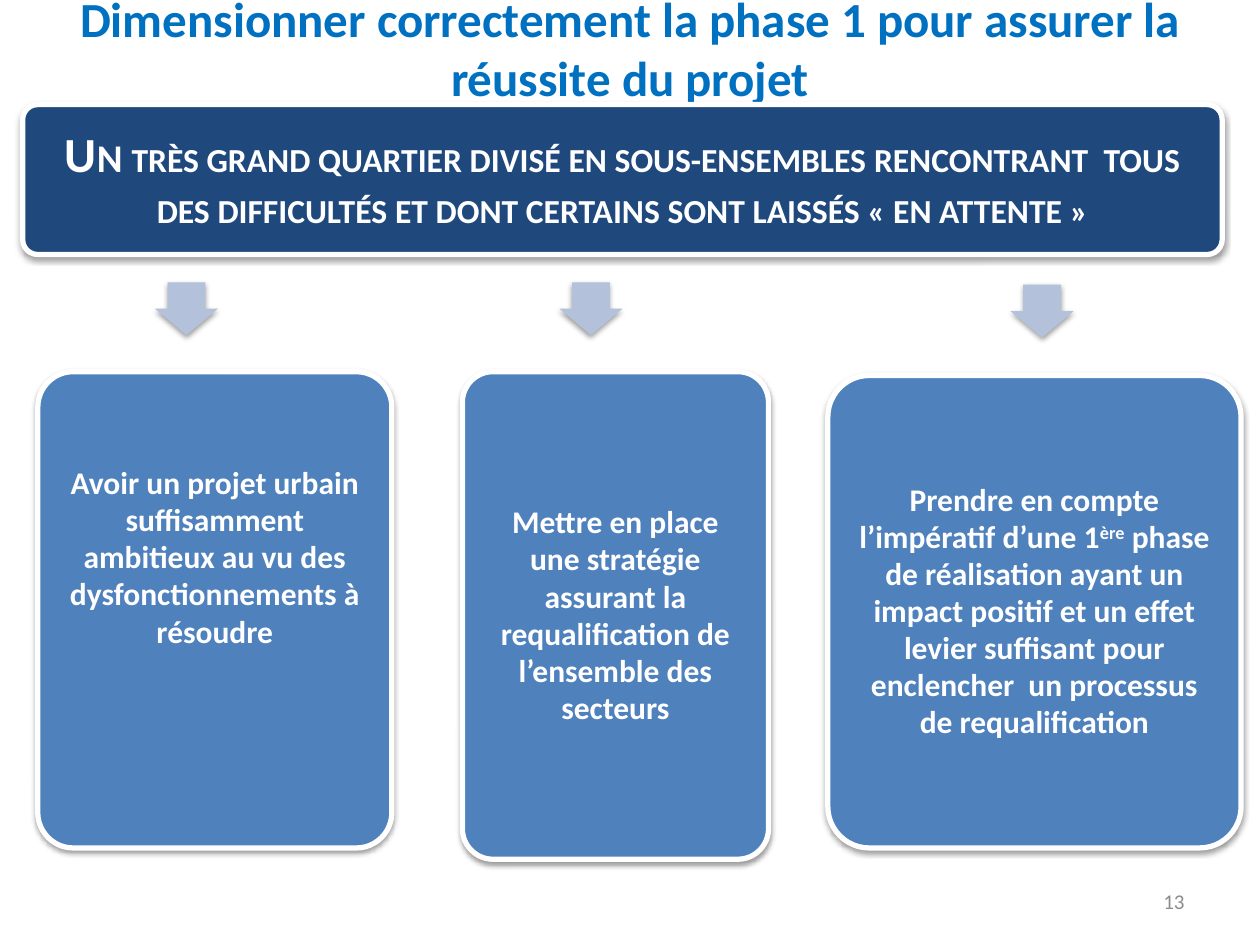
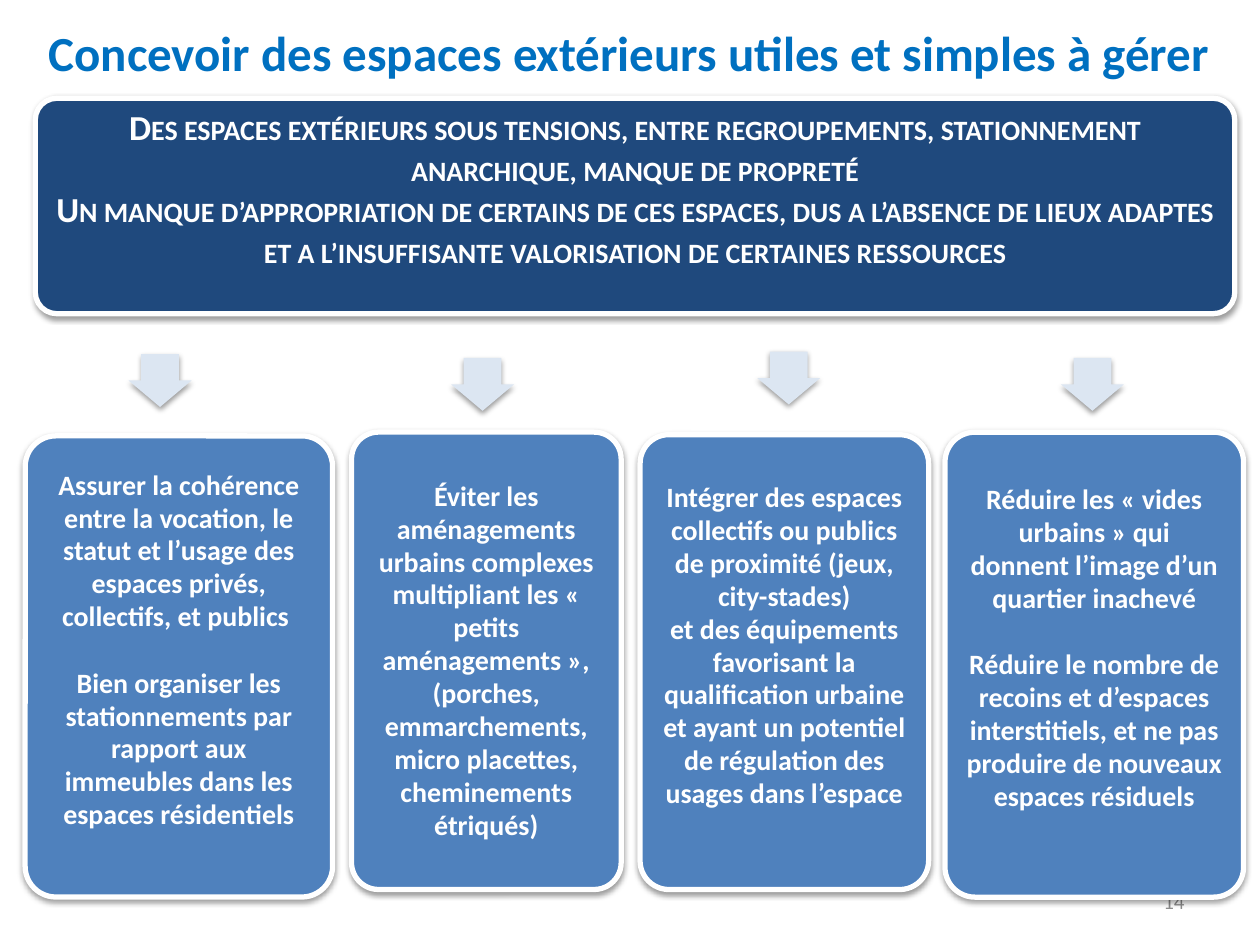
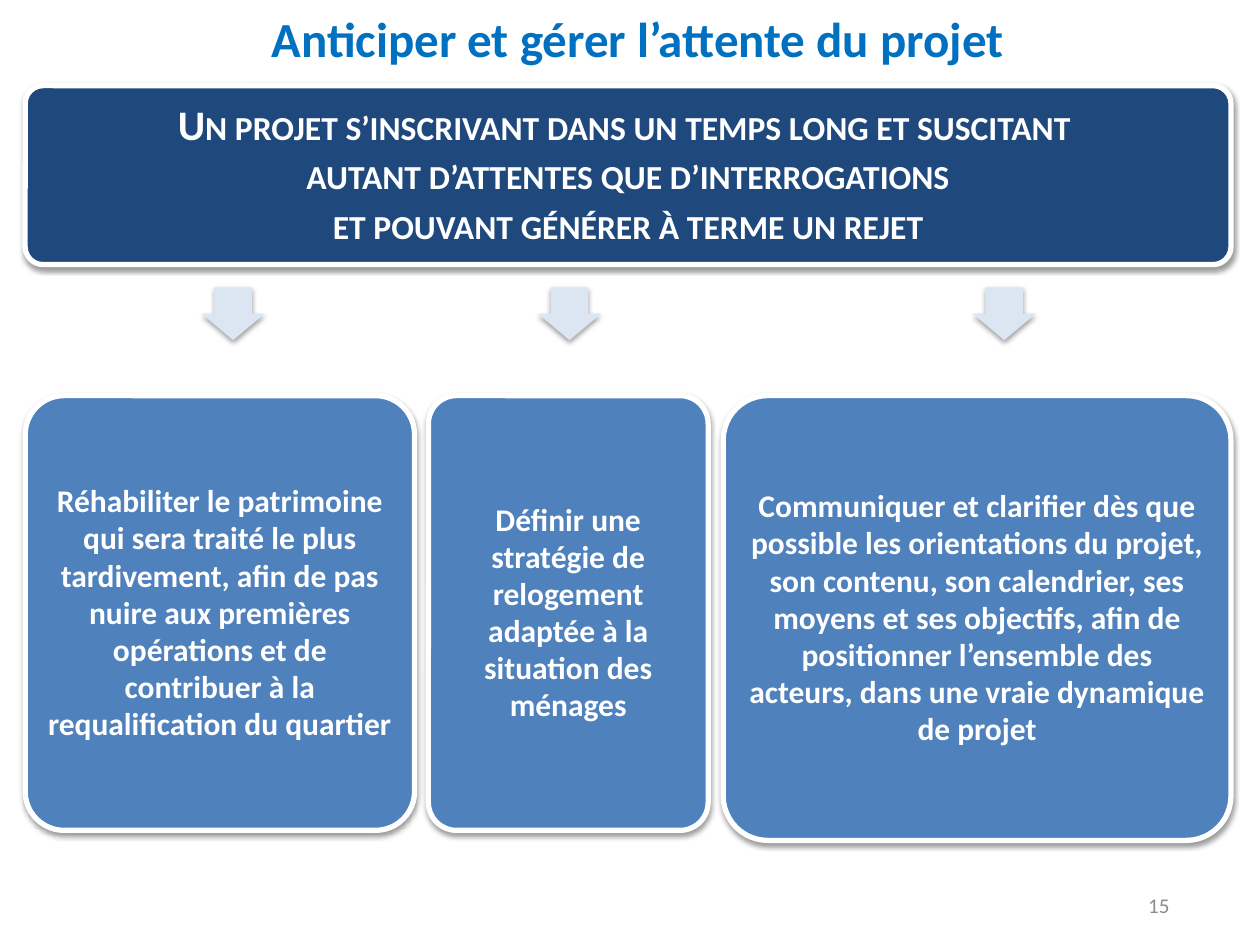
from lxml import etree
from pptx import Presentation
from pptx.dml.color import RGBColor
from pptx.enum.shapes import MSO_SHAPE as SHAPE
from pptx.enum.text import MSO_ANCHOR as ANCHOR, PP_ALIGN as ALIGN
from pptx.oxml.ns import qn
from pptx.util import Inches, Pt

COLORS = {
    "title": "0070C0",
    "banner": "1F497D",
    "card": "4F81BD",
    "arrow": "B3C1DB",
    "pale_arrow": "DCE6F2",
    "white": "FFFFFF",
    "number": "8C8C8C",
    "black": "000000",
}
FONT = "Calibri"
PAD = 0.05

SLIDES = [
    {
        "title": "Dimensionner correctement la phase 1 pour assurer la réussite du projet",
        "title_box": (0, 0, 10, 0.76),
        "number": (13, 7.17, 6.95),
        "banner_box": (0.18, 0.83, 9.52, 1.19),
        "banner_size": 24,
        "banner": [[
            ("Un ", {"sz": "2800"}),
            ("très grand quartier divisé en sous-ensembles rencontrant  tous des difficultés "
             "et dont certains sont laissés « en attente »", {}),
        ]],
        "arrow_color": "arrow",
        "arrows": [(1.27, 2.2), (4.48, 2.2), (8.06, 2.22)],
        "card_size": 18,
        "side": 0.12,
        "cards": [
            ((0.3, 2.95, 2.81, 3.78), ANCHOR.TOP, 0.66, PAD, [
                "Avoir un projet urbain suffisamment ambitieux au vu des dysfonctionnements à résoudre"]),
            ((3.67, 2.95, 2.43, 3.87), ANCHOR.MIDDLE, PAD, PAD, [
                "Mettre en place une stratégie assurant la requalification de l’ensemble des secteurs"]),
            ((6.57, 2.98, 3.28, 3.75), ANCHOR.MIDDLE, PAD, PAD, [[
                ("Prendre en compte l’impératif d’une 1", {}),
                ("ère", {"baseline": "30000"}),
                (" phase de réalisation ayant un impact positif et un effet levier suffisant "
                 "pour enclencher  un processus de requalification", {}),
            ]]),
        ],
    },
    {
        "title": "Concevoir des espaces extérieurs utiles et simples à gérer",
        "title_box": (0, 0, 9.98, 0.82),
        "number": (14, 7.17, 6.95),
        "banner_box": (0.28, 0.78, 9.52, 1.71),
        "banner_size": 20,
        "banner_bottom": 0.31,
        "banner": [
            "Des espaces extérieurs sous tensions, entre regroupements, stationnement anarchique, "
            "manque de propreté",
            "Un manque d’appropriation de certains de ces espaces, dus a l’absence de lieux adaptes "
            "et a l’insuffisante valorisation de certaines ressources",
        ],
        "arrow_color": "pale_arrow",
        "arrows": [(1.06, 2.77), (3.62, 2.8), (6.05, 2.75), (8.46, 2.8)],
        "card_size": 16,
        "side": 0.08,
        "gap": 19.2,
        "cards": [
            ((0.2, 3.46, 2.44, 3.66), ANCHOR.MIDDLE, PAD, 0.31, [
                "Assurer la cohérence entre la vocation, le statut et l’usage des espaces privés, "
                "collectifs, et publics ",
                "Bien organiser les stationnements par rapport aux immeubles dans les espaces résidentiels"]),
            ((2.79, 3.43, 2.14, 3.63), ANCHOR.MIDDLE, PAD, PAD, [
                "Éviter les aménagements urbains complexes multipliant les « petits aménagements », "
                "(porches, emmarchements, micro placettes, cheminements étriqués)"]),
            ((5.08, 3.45, 2.29, 3.61), ANCHOR.MIDDLE, PAD, 0.31, [
                "Intégrer des espaces collectifs ou publics de proximité (jeux, city-stades)\v"
                "et des équipements favorisant la qualification urbaine et ayant un potentiel "
                "de régulation des usages dans l’espace"]),
            ((7.5, 3.43, 2.37, 3.69), ANCHOR.MIDDLE, PAD, 0.31, [
                "Réduire les « vides urbains » qui\vdonnent l’image d’un quartier inachevé",
                "Réduire le nombre de recoins et d’espaces interstitiels, et ne pas produire "
                "de nouveaux espaces résiduels"]),
        ],
    },
    {
        "title": "Anticiper et gérer l’attente du projet",
        "title_box": (0.09, 0, 9.94, 0.6),
        "number": (15, 7.05, 6.98),
        "banner_box": (0.2, 0.68, 9.57, 1.42),
        "banner_size": 24,
        "banner": [
            [("U", {"sz": "2800"}), ("n projet s’inscrivant dans un temps long et suscitant ", {})],
            "autant d’attentes que d’interrogations",
            "et pouvant générer à terme un rejet",
        ],
        "arrow_color": "pale_arrow",
        "arrows": [(1.64, 2.24), (4.31, 2.24), (7.76, 2.24)],
        "card_size": 18,
        "side": 0.09,
        "cards": [
            ((0.2, 3.14, 3.09, 3.45), ANCHOR.MIDDLE, PAD, PAD, [
                "Réhabiliter le patrimoine qui sera traité le plus tardivement, afin de pas nuire "
                "aux premières opérations et de contribuer à la requalification du quartier"]),
            ((3.4, 3.14, 2.22, 3.45), ANCHOR.MIDDLE, PAD, PAD, [
                "Définir une stratégie de relogement adaptée à la situation des ménages"]),
            ((5.74, 3.14, 4.03, 3.53), ANCHOR.MIDDLE, PAD, PAD, [
                "Communiquer et clarifier dès que possible les orientations du projet, son contenu, "
                "son calendrier, ses moyens et ses objectifs, afin de positionner l’ensemble des "
                "acteurs, dans une vraie dynamique de projet"]),
        ],
    },
]
SLIDES[2]["banner"][0] = "Un projet s’inscrivant dans un temps long et suscitant "


def add_block(s, preset, box, color):
    sp = s.shapes.add_shape(preset, *[Inches(v) for v in box])
    sp.fill.solid()
    sp.fill.fore_color.rgb = RGBColor.from_string(COLORS[color])
    if preset == SHAPE.ROUNDED_RECTANGLE:
        sp.adjustments[0] = 0.1
        sp.line.color.rgb = RGBColor.from_string(COLORS["white"])
        sp.line.width = Pt(3)
    else:
        sp.line.fill.background()
    sp.shadow.inherit = False
    effects = sp._element.spPr.find(qn("a:effectLst"))
    shadow = etree.SubElement(effects, qn("a:outerShdw"), blurRad="40000", dist="20000",
                              dir="5400000", rotWithShape="0")
    clr = etree.SubElement(shadow, qn("a:srgbClr"), val=COLORS["black"])
    etree.SubElement(clr, qn("a:alpha"), val="38000")
    return sp


def write(sp, paragraphs, size, color, bold=True, align=ALIGN.CENTER, anchor=ANCHOR.MIDDLE,
          side=0.1, top=PAD, bottom=PAD, spacing=1.0, gap=0, caps=False):
    tf = sp.text_frame
    tf.word_wrap = True
    tf.vertical_anchor = anchor
    tf.margin_left = tf.margin_right = Inches(side)
    tf.margin_top, tf.margin_bottom = Inches(top), Inches(bottom)
    for i, content in enumerate(paragraphs):
        p = tf.add_paragraph() if i else tf.paragraphs[0]
        p.alignment = align
        p.line_spacing = spacing
        if i and gap:
            p.space_before = Pt(gap)
        if isinstance(content, str):
            p.text = content
            extras = [{}] * len(p.runs)
        else:
            for text, extra in content:
                p.add_run().text = text
            extras = [extra for text, extra in content]
        for r, extra in zip(p.runs, extras):
            r.font.name = FONT
            r.font.size = Pt(size)
            r.font.bold = bold
            r.font.color.rgb = RGBColor.from_string(COLORS[color])
            rPr = r._r.get_or_add_rPr()
            if caps:
                rPr.set("cap", "small")
            for name, value in extra.items():
                rPr.set(name, value)


prs = Presentation()
prs.slide_width, prs.slide_height = Inches(10), Inches(7.5)

for data in SLIDES:
    s = prs.slides.add_slide(prs.slide_layouts[6])

    title = s.shapes.add_textbox(*[Inches(v) for v in data["title_box"]])
    write(title, [data["title"]], 28, "title")

    page, left, top = data["number"]
    number = s.shapes.add_textbox(Inches(left), Inches(top), Inches(2.33), Inches(0.4))
    write(number, [str(page)], 12, "number", bold=False, align=ALIGN.RIGHT)

    banner = add_block(s, SHAPE.ROUNDED_RECTANGLE, data["banner_box"], "banner")
    write(banner, data["banner"], data["banner_size"], "white", spacing=0.98,
          bottom=data.get("banner_bottom", PAD), caps=True)

    for left, top in data["arrows"]:
        arrow = add_block(s, SHAPE.RIGHT_ARROW, (left, top, 0.42, 0.5), data["arrow_color"])
        arrow.adjustments[0], arrow.adjustments[1] = 0.6, 0.5
        arrow.rotation = 90

    for box, anchor, top, bottom, paragraphs in data["cards"]:
        card = add_block(s, SHAPE.ROUNDED_RECTANGLE, box, "card")
        write(card, paragraphs, data["card_size"], "white", anchor=anchor, side=data["side"],
              top=top, bottom=bottom, spacing=0.98, gap=data.get("gap", 0))

prs.save("out.pptx")
